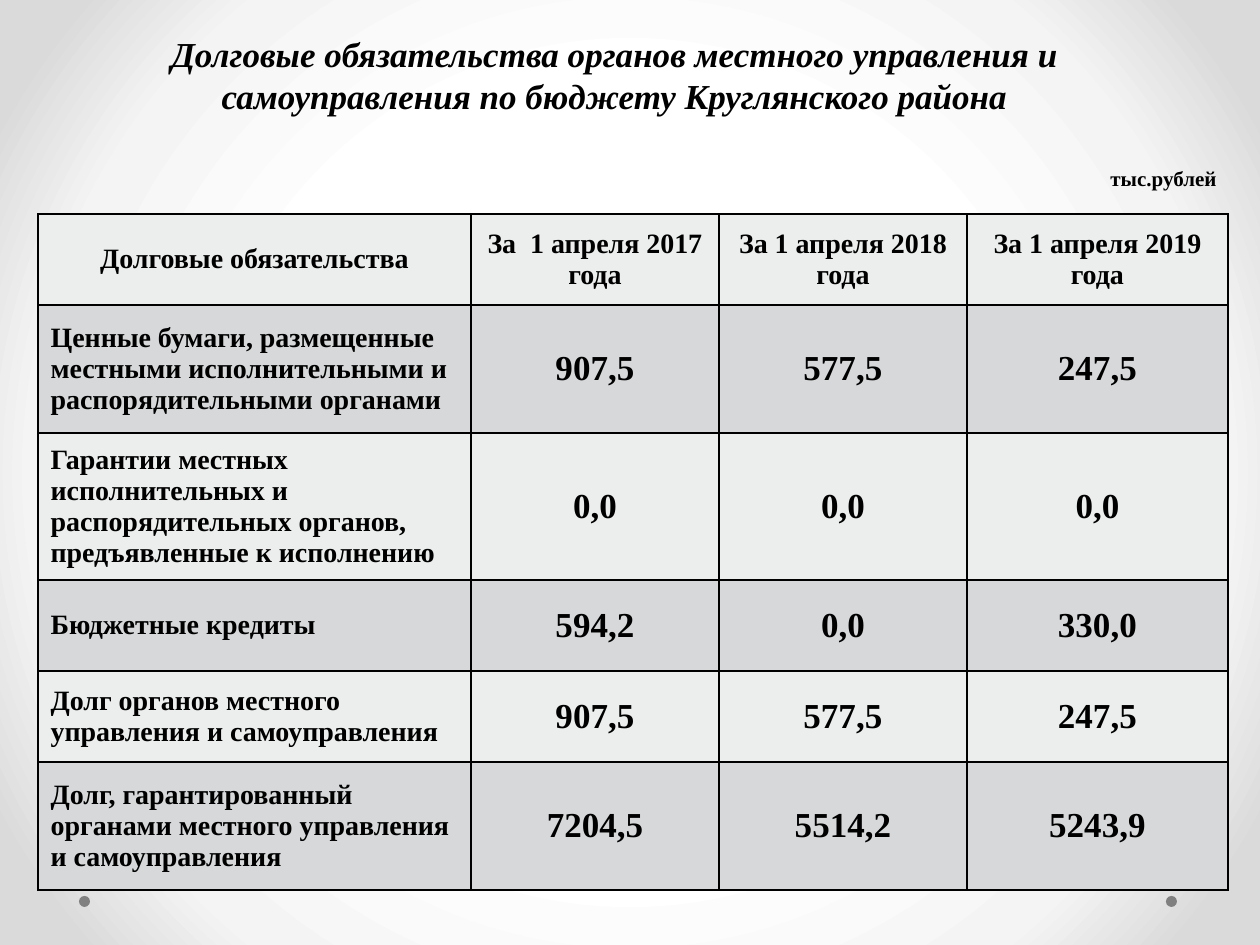
from dataclasses import dataclass
from typing import NamedTuple

from pptx import Presentation
from pptx.dml.color import RGBColor
from pptx.enum.shapes import MSO_SHAPE as Preset
from pptx.enum.text import MSO_ANCHOR as Anchor, MSO_AUTO_SIZE as AutoSize, PP_ALIGN as Align
from pptx.oxml import parse_xml
from pptx.oxml.ns import nsdecls
from pptx.util import Emu, Pt

PX_PER_INCH = 126


@dataclass(frozen=True)
class Theme:
    font: str = "Times New Roman"
    ink: str = "000000"
    dot: str = "808080"
    bands: tuple = ("ECEDED", "D6D8D9")
    glow: tuple = ((50, "FFFFFF"), (76, "F4F4F4"), (92, "DADADA"))
    large: int = 20
    body: int = 16
    small: int = 12
    border: int = 1


class Box(NamedTuple):
    left: int
    top: int
    width: int
    height: int


class DebtRow(NamedTuple):
    height: int
    label: str
    values: tuple


THEME = Theme()
TITLE_BOX = Box(64, 26, 1101, 97)
UNIT_BOX = Box(1097, 159, 132, 38)
DOTS = [Box(left, 896, 11, 11) for left in (1166, 79)]
TABLE_LEFT, TABLE_TOP = 38, 214
COLUMN_WIDTHS = (433, 248, 248, 261)
ROWS = [
    DebtRow(91, "Долговые обязательства",
            ("За  1 апреля 2017 года", "За 1 апреля 2018 года", "За 1 апреля 2019 года")),
    DebtRow(128, "Ценные бумаги, размещенные местными исполнительными и распорядительными органами",
            ("907,5", "577,5", "247,5")),
    DebtRow(128, "Гарантии местных исполнительных и распорядительных органов, предъявленные к исполнению",
            ("0,0", "0,0", "0,0")),
    DebtRow(91, "Бюджетные кредиты", ("594,2", "0,0", "330,0")),
    DebtRow(91, "Долг органов местного управления и самоуправления",
            ("907,5", "577,5", "247,5")),
    DebtRow(128, "Долг, гарантированный органами местного управления и самоуправления",
            ("7204,5", "5514,2", "5243,9")),
]


def px(length: int) -> Emu:
    return Emu(round(length * 914400 / PX_PER_INCH))


def apply(target, formats: dict) -> None:
    for name, value in formats.items():
        setattr(target, name, value)


def place(shape, box: Box) -> None:
    apply(shape, {side: px(length) for side, length in box._asdict().items()})


def write(frame, text: str, size: int, align: Align, italic: bool = False) -> None:
    paragraph = frame.paragraphs[0]
    paragraph.alignment = align
    run = paragraph.add_run()
    run.text = text
    apply(run.font, {"name": THEME.font, "size": Pt(size), "bold": True, "italic": italic})
    run.font.color.rgb = RGBColor.from_string(THEME.ink)


def paint_background(slide) -> None:
    """Fill the slide with a circular gradient from its centre."""
    stops = "".join(f'<a:gs pos="{pos * 1000}"><a:srgbClr val="{color}"/></a:gs>'
                    for pos, color in THEME.glow)
    slide.element.cSld.insert(0, parse_xml(
        f'<p:bg {nsdecls("p", "a")}><p:bgPr><a:gradFill rotWithShape="1">'
        f'<a:gsLst>{stops}</a:gsLst><a:path path="circle">'
        '<a:fillToRect l="50000" t="50000" r="50000" b="50000"/></a:path>'
        '</a:gradFill><a:effectLst/></p:bgPr></p:bg>'))


def add_dot(slide, box: Box) -> None:
    dot = slide.shapes.add_shape(Preset.OVAL, *map(px, box))
    dot.shadow.inherit = False
    dot.fill.solid()
    dot.fill.fore_color.rgb = RGBColor.from_string(THEME.dot)
    dot.line.fill.background()


def add_title(slide, text: str) -> None:
    title = slide.shapes.title
    place(title, TITLE_BOX)
    apply(title.text_frame, {"word_wrap": True, "auto_size": AutoSize.SHAPE_TO_FIT_TEXT,
                             "vertical_anchor": Anchor.TOP})
    write(title.text_frame, text, THEME.large, Align.CENTER, italic=True)


def add_unit(slide, text: str) -> None:
    frame = slide.shapes.add_textbox(*map(px, UNIT_BOX)).text_frame
    apply(frame, {"word_wrap": False, "auto_size": AutoSize.SHAPE_TO_FIT_TEXT})
    write(frame, text, THEME.small, Align.RIGHT)


def style_cell(cell, color: str) -> None:
    properties = cell._tc.get_or_add_tcPr()
    for edge in ("lnL", "lnR", "lnT", "lnB"):
        properties.append(parse_xml(
            f'<a:{edge} {nsdecls("a")} w="{Pt(THEME.border)}"><a:solidFill>'
            f'<a:srgbClr val="{THEME.ink}"/></a:solidFill></a:{edge}>'))
    cell.fill.solid()
    cell.fill.fore_color.rgb = RGBColor.from_string(color)
    cell.vertical_anchor = Anchor.MIDDLE


def add_debt_table(slide) -> None:
    box = Box(TABLE_LEFT, TABLE_TOP, sum(COLUMN_WIDTHS), sum(row.height for row in ROWS))
    table = slide.shapes.add_table(len(ROWS), len(COLUMN_WIDTHS), *map(px, box)).table
    for column, width in zip(table.columns, COLUMN_WIDTHS):
        column.width = px(width)
    for r, row in enumerate(ROWS):
        table.rows[r].height = px(row.height)
        for c, text in enumerate((row.label, *row.values)):
            cell = table.cell(r, c)
            style_cell(cell, THEME.bands[r % 2])
            write(cell.text_frame, text,
                  THEME.large if r and c else THEME.body,
                  Align.LEFT if r and not c else Align.CENTER)


def main() -> None:
    deck = Presentation()
    apply(deck, {"slide_width": px(1260), "slide_height": px(945)})
    slide = deck.slides.add_slide(deck.slide_layouts.get_by_name("Title Only"))
    paint_background(slide)
    for box in DOTS:
        add_dot(slide, box)
    add_title(slide, "Долговые обязательства органов местного управления и "
                     "самоуправления по бюджету Круглянского района")
    add_debt_table(slide)
    add_unit(slide, "тыс.рублей")
    deck.save("out.pptx")


if __name__ == "__main__":
    main()
